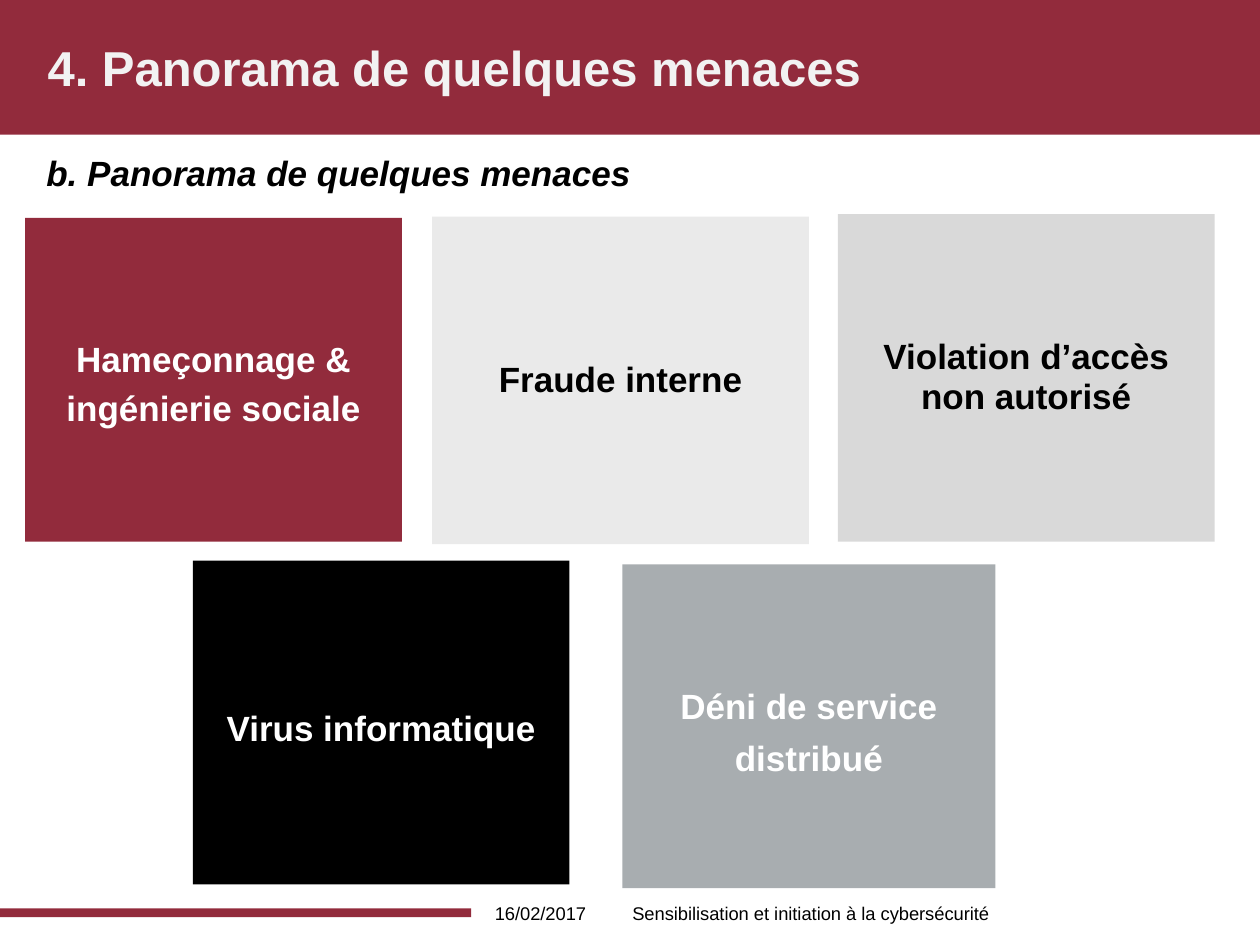
from pptx import Presentation
from pptx.dml.color import RGBColor
from pptx.enum.shapes import MSO_SHAPE
from pptx.enum.text import MSO_ANCHOR, PP_ALIGN
from pptx.util import Inches, Pt

RECTANGLE = MSO_SHAPE.RECTANGLE
TOP, MIDDLE = MSO_ANCHOR.TOP, MSO_ANCHOR.MIDDLE
LEFT, CENTER = PP_ALIGN.LEFT, PP_ALIGN.CENTER
COLORS = {
    "burgundy": "922B3C", "white": "FFFFFF", "black": "000000", "title": "F2F2F2",
    "pale": "EAEAEA", "light": "D9D9D9", "gray": "A8ADB0",
}
THREATS = [
    ((0.2, 1.73, 2.99, 2.57), "Hameçonnage & ingénierie sociale", "burgundy", "white", 1.15),
    ((3.43, 1.72, 2.99, 2.6), "Fraude interne", "pale", "black", 0.95),
    ((6.65, 1.7, 2.99, 2.6), "Violation d’accès non autorisé", "light", "black", 0.95),
    ((1.53, 4.45, 2.99, 2.57), "Virus informatique", "black", "white", 1.25),
    ((4.94, 4.48, 2.96, 2.57), "Déni de service distribué", "gray", "white", 1.25),
]


def rgb(name):
    """Return the named palette colour."""
    return RGBColor.from_string(COLORS[name])


def write(shape, text, size, color, bold=False, italic=False,
          align=LEFT, anchor=MIDDLE, spacing=1.0):
    """Write one styled paragraph into a shape."""
    frame = shape.text_frame
    frame.word_wrap = True
    frame.vertical_anchor = anchor
    paragraph = frame.paragraphs[0]
    paragraph.text = text
    paragraph.alignment = align
    paragraph.line_spacing = spacing
    font = paragraph.font
    font.name, font.size = "Arial", Pt(size)
    font.bold, font.italic = bold, italic
    font.color.rgb = rgb(color)


def add_block(slide, box, fill):
    """Add a plain filled rectangle."""
    shape = slide.shapes.add_shape(RECTANGLE, *map(Inches, box))
    shape.shadow.inherit = False
    shape.fill.solid()
    shape.fill.fore_color.rgb = rgb(fill)
    shape.line.fill.background()
    return shape


def add_label(slide, box, text, size, color, **style):
    """Add a text box with one paragraph."""
    write(slide.shapes.add_textbox(*map(Inches, box)), text, size, color, **style)


def add_header(slide, box):
    """Add the title band and the subtitle below it."""
    left, top, width, height = box
    add_block(slide, box, "burgundy")
    add_label(slide, (left + 0.28, top, width - 0.47, height),
              "4. Panorama de quelques menaces", 28, "title", bold=True)
    add_label(slide, (left + 0.27, top + height + 0.08, width - 0.47, 0.63),
              "b. Panorama de quelques menaces", 20, "black",
              bold=True, italic=True, anchor=TOP)


def add_threats(slide):
    """Add one tile for each threat."""
    for box, text, fill, color, spacing in THREATS:
        write(add_block(slide, box, fill), text, 20, color,
              bold=True, align=CENTER, spacing=spacing)


def add_footer(slide, box):
    """Add the footer rule, date and presentation name."""
    left, top, width, height = box
    rule_width = 3.74
    add_block(slide, (left, top + 0.16, rule_width, 0.07), "burgundy")
    add_label(slide, (left + rule_width, top, 1.1, height),
              "16/02/2017", 10.5, "black", align=CENTER)
    add_label(slide, (left + 4.92, top, width - 6.68, height),
              "Sensibilisation et initiation à la cybersécurité", 10.5, "black")


def main():
    """Build and save the presentation."""
    presentation = Presentation()
    presentation.slide_width, presentation.slide_height = Inches(10), Inches(7.5)
    slide = presentation.slides.add_slide(presentation.slide_layouts[6])
    add_header(slide, (0, 0, 10, 1.07))
    add_threats(slide)
    add_footer(slide, (0, 7.05, 10, 0.4))
    presentation.save("out.pptx")


if __name__ == "__main__":
    main()
